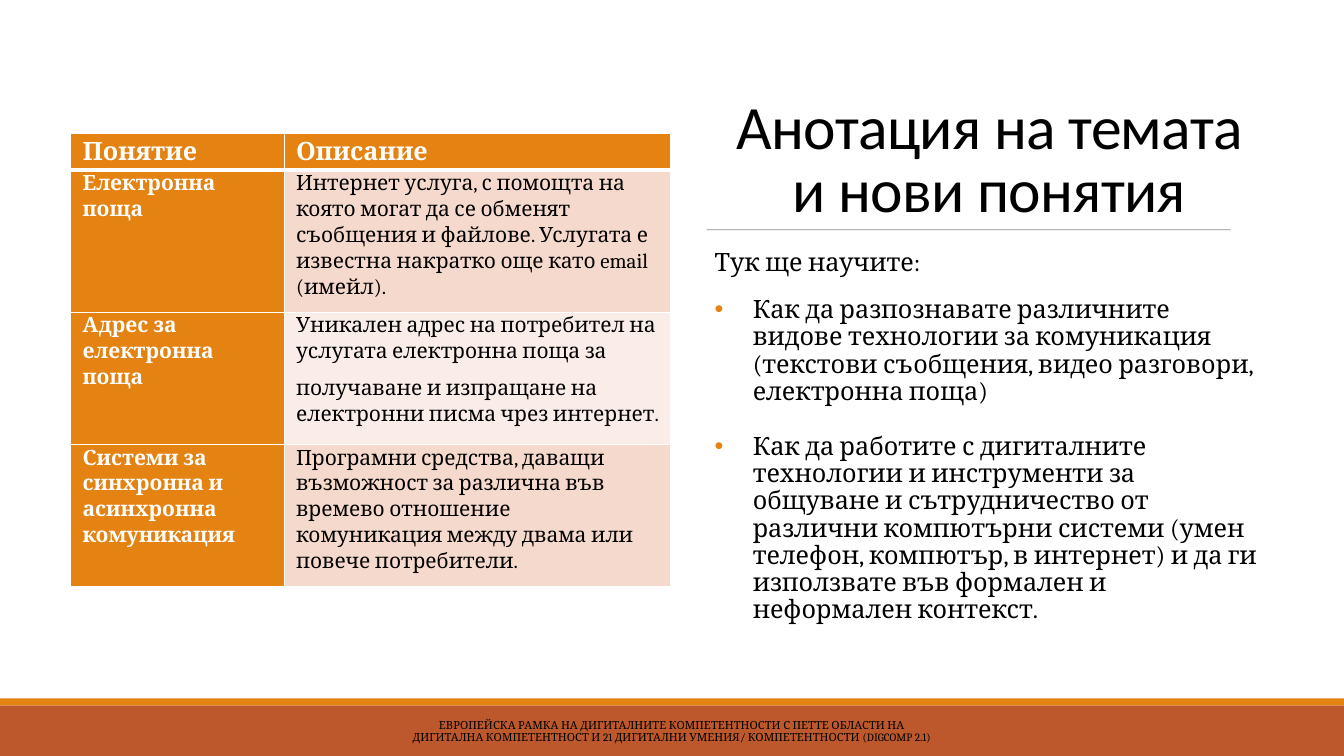
from dataclasses import dataclass

from lxml import etree
from pptx import Presentation
from pptx.dml.color import RGBColor
from pptx.enum.shapes import MSO_CONNECTOR, MSO_SHAPE
from pptx.enum.text import MSO_ANCHOR, MSO_AUTO_SIZE, PP_ALIGN
from pptx.oxml.ns import qn
from pptx.util import Cm, Pt

RECTANGLE = MSO_SHAPE.RECTANGLE
STRAIGHT = MSO_CONNECTOR.STRAIGHT
TOP, MIDDLE, BOTTOM = MSO_ANCHOR.TOP, MSO_ANCHOR.MIDDLE, MSO_ANCHOR.BOTTOM
CENTER, LEFT = PP_ALIGN.CENTER, PP_ALIGN.LEFT
NO_AUTOFIT = MSO_AUTO_SIZE.NONE


@dataclass(frozen=True)
class Theme:
    text: str = "000000"
    white: str = "FFFFFF"
    orange: str = "E48312"
    rust: str = "BD582C"
    rule: str = "808080"
    bands: tuple = ("F5D9CC", "FAEDE7")
    heading_font: str = "Calibri"
    body_font: str = "Cambria"
    title_size: int = 44
    body_size: int = 18
    cell_size: int = 15
    footer_size: int = 8


THEME = Theme()


def write(paragraph, text, size, color=THEME.text, font=THEME.body_font,
          bold=False, align=LEFT, spacing=0.9, before=0, after=0):
    """Add one formatted run and set the spacing of its paragraph."""
    paragraph.alignment = align
    paragraph.line_spacing = spacing
    paragraph.space_before = Pt(before)
    paragraph.space_after = Pt(after)
    run = paragraph.add_run()
    run.text = text
    run.font.name = font
    run.font.size = Pt(size)
    run.font.bold = bold
    run.font.color.rgb = RGBColor.from_string(color)
    return run


def set_borders(cell, widths):
    """Draw white cell borders; widths are points for left, right, top, bottom."""
    properties = cell._tc.get_or_add_tcPr()
    for index, (side, width) in enumerate(zip("LRTB", widths)):
        line = etree.Element(qn(f"a:ln{side}"), w=str(Pt(width)))
        fill = etree.SubElement(line, qn("a:solidFill"))
        etree.SubElement(fill, qn("a:srgbClr"), val=THEME.white)
        properties.insert(index, line)


presentation = Presentation()
presentation.slide_width = Cm(33.87)
presentation.slide_height = Cm(19.05)
slide = presentation.slides.add_slide(presentation.slide_layouts[1])
shapes = slide.shapes

# Title and the rule under it
title = shapes.title
title.left, title.top, title.width, title.height = Cm(17.81), Cm(1.75), Cm(14.25), Cm(4.04)
title.text_frame.auto_size = NO_AUTOFIT
title.text_frame.word_wrap = True
title.text_frame.vertical_anchor = BOTTOM
title_run = write(title.text_frame.paragraphs[0], "Анотация на темата и нови понятия",
                  THEME.title_size, font=THEME.heading_font, align=CENTER, spacing=0.85)
title_run.font._element.set("spc", "-50")

rule = shapes.add_connector(STRAIGHT, Cm(17.81), Cm(5.79), Cm(31.01), Cm(5.79))
rule.line.width = Pt(0.5)
rule.line.color.rgb = RGBColor.from_string(THEME.rule)
rule_color = rule.line._ln.find(".//" + qn("a:srgbClr"))
etree.SubElement(rule_color, qn("a:alpha"), val="90000")
etree.SubElement(rule._element.spPr, qn("a:effectLst"))

# Learning goals
goals = [
    "Как да разпознавате различните видове технологии за комуникация "
    "(текстови съобщения, видео разговори, електронна поща)",
    "Как да работите с дигиталните технологии и инструменти за общуване и сътрудничество "
    "от различни компютърни системи (умен телефон, компютър, в интернет) и да ги "
    "използвате във формален и неформален контекст.",
]
body = slide.placeholders[1]
body.left, body.top, body.width, body.height = Cm(17.81), Cm(6.1), Cm(14.25), Cm(10.19)
frame = body.text_frame
frame.auto_size = NO_AUTOFIT
frame.word_wrap = True
frame.vertical_anchor = TOP
frame.margin_left = frame.margin_right = frame.margin_top = frame.margin_bottom = Cm(0.2)

intro = frame.paragraphs[0]
intro_properties = intro._p.get_or_add_pPr()
intro_properties.set("marL", "0")
intro_properties.set("indent", "0")
etree.SubElement(intro_properties, qn("a:buNone"))
write(intro, "Тук ще научите:", THEME.body_size, after=2)

for goal in goals:
    paragraph = frame.add_paragraph()
    properties = paragraph._p.get_or_add_pPr()
    properties.set("marL", str(Cm(0.96)))
    properties.set("indent", str(-Cm(0.96)))
    bullet_color = etree.SubElement(properties, qn("a:buClr"))
    etree.SubElement(bullet_color, qn("a:srgbClr"), val=THEME.orange)
    etree.SubElement(properties, qn("a:buFont"), typeface="Arial")
    etree.SubElement(properties, qn("a:buChar"), char="•")
    write(paragraph, goal, THEME.body_size, before=12, after=8)

# Footer bands and text
for top, height, color in [(17.6, 0.18, THEME.orange), (17.78, 1.27, THEME.rust)]:
    band = shapes.add_shape(RECTANGLE, 0, Cm(top), presentation.slide_width, Cm(height))
    band.shadow.inherit = False
    band.fill.solid()
    band.fill.fore_color.rgb = RGBColor.from_string(color)
    band.line.fill.background()

footer = shapes.add_textbox(Cm(10.24), Cm(17.93), Cm(13.39), Cm(1.02)).text_frame
footer.word_wrap = True
footer.vertical_anchor = MIDDLE
footer.margin_left = footer.margin_right = footer.margin_top = footer.margin_bottom = Cm(0.1)
write(footer.paragraphs[0],
      "ЕВРОПЕЙСКА РАМКА НА ДИГИТАЛНИТЕ КОМПЕТЕНТНОСТИ С ПЕТТЕ ОБЛАСТИ НА ДИГИТАЛНА "
      "КОМПЕТЕНТНОСТ И 21 ДИГИТАЛНИ УМЕНИЯ/ КОМПЕТЕНТНОСТИ (DIGCOMP 2.1)",
      THEME.footer_size, align=CENTER, after=6)

# Table of terms: each cell is a list of paragraphs
terms = [
    (["Понятие"], ["Описание"]),
    (["Електронна поща"],
     ["Интернет услуга, с помощта на която могат да се обменят съобщения и файлове. "
      "Услугата е известна накратко още като email (имейл)."]),
    (["Адрес за електронна поща"],
     ["Уникален адрес на потребител на услугата електронна поща за",
      "получаване и изпращане на електронни писма чрез интернет."]),
    (["Системи за синхронна и асинхронна комуникация"],
     ["Програмни средства, даващи възможност за различна във времево отношение "
      "комуникация между двама или повече потребители."]),
]
column_widths = [5.38, 9.75]
row_heights = [0.94, 3.58, 3.33, 3.58]
table = shapes.add_table(len(terms), 2, Cm(1.78), Cm(3.35),
                         Cm(sum(column_widths)), Cm(sum(row_heights))).table
for column, width in zip(table.columns, column_widths):
    column.width = Cm(width)
for row, height in zip(table.rows, row_heights):
    row.height = Cm(height)

for row_index, row_texts in enumerate(terms):
    is_header = row_index == 0
    for column_index, texts in enumerate(row_texts):
        is_label = is_header or column_index == 0
        cell = table.cell(row_index, column_index)
        cell.margin_left = cell.margin_right = Cm(0.3)
        cell.margin_top = cell.margin_bottom = 0
        cell.vertical_anchor = MIDDLE if is_header else TOP
        cell.fill.solid()
        cell.fill.fore_color.rgb = RGBColor.from_string(
            THEME.orange if is_label else THEME.bands[(row_index - 1) % 2])
        set_borders(cell, (1, 1, 3 if row_index == 1 else 1, 3 if is_header else 1))
        for index, text in enumerate(texts):
            cell_frame = cell.text_frame
            paragraph = cell_frame.add_paragraph() if index else cell_frame.paragraphs[0]
            write(paragraph, text, THEME.body_size if is_header else THEME.cell_size,
                  color=THEME.white if is_label else THEME.text,
                  bold=is_label, spacing=1.07, after=8)

presentation.save("out.pptx")
